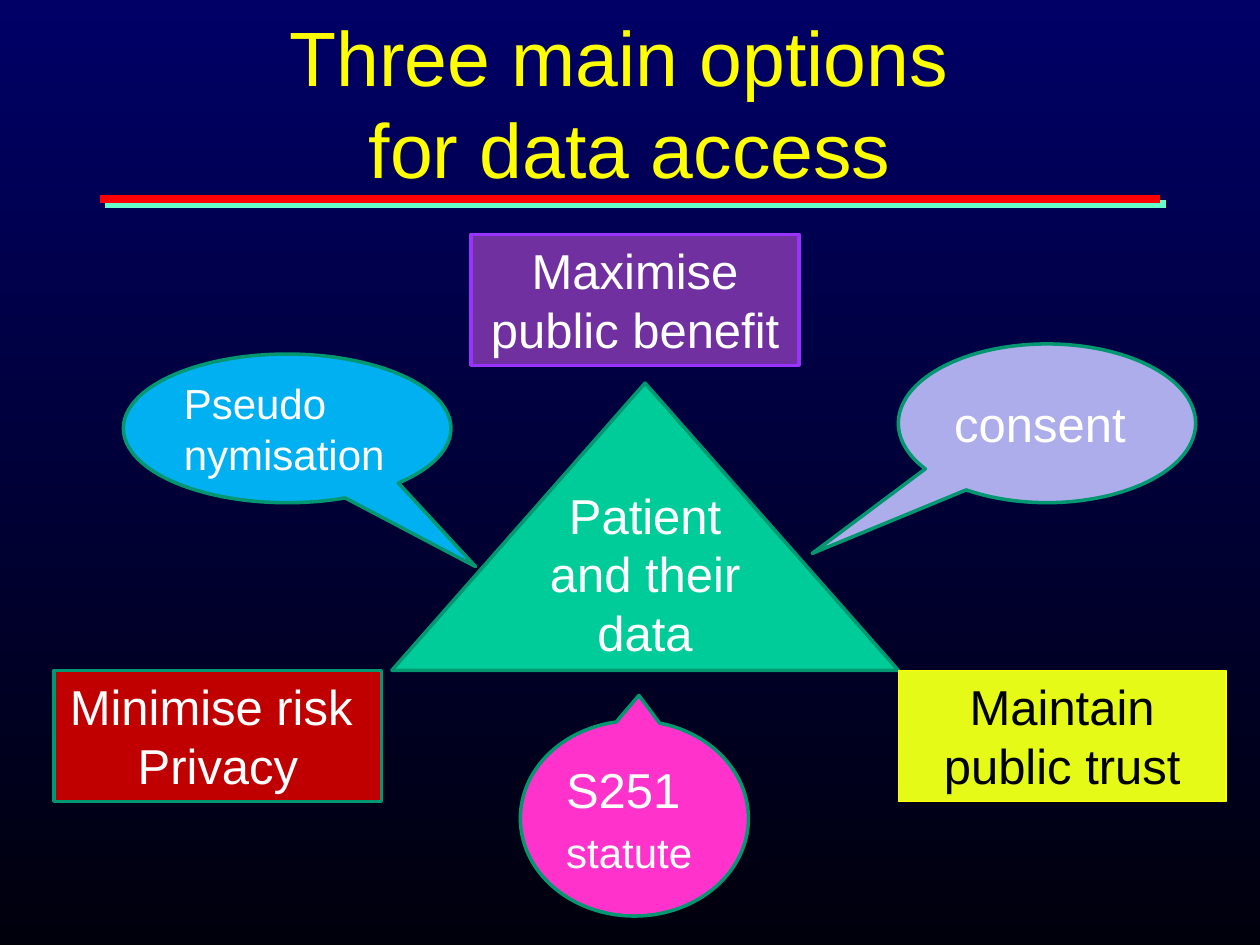
from lxml import etree
from pptx import Presentation
from pptx.dml.color import RGBColor
from pptx.enum.shapes import MSO_CONNECTOR, MSO_SHAPE
from pptx.enum.text import MSO_ANCHOR, PP_ALIGN
from pptx.oxml.ns import qn
from pptx.util import Inches, Pt

RECT, TRIANGLE = MSO_SHAPE.RECTANGLE, MSO_SHAPE.ISOSCELES_TRIANGLE
CALLOUT = MSO_SHAPE.OVAL_CALLOUT
CENTER, LEFT = PP_ALIGN.CENTER, PP_ALIGN.LEFT
TOP, MIDDLE = MSO_ANCHOR.TOP, MSO_ANCHOR.MIDDLE

FONT = "Arial"
WHITE, BLACK, YELLOW = "FFFFFF", "000000", "FFFF00"
GREEN = "009771"
GRADIENT = ("000066", "00000C")
MARGIN, RULE_Y, RULE_WIDTH = 0.79, 1.58, 8.42
RULE_COLOR, RULE_SHADOW = "FF0000", "66FFCC"

TITLE = "Three main options \vfor data access"
PATIENT = "Patient and their data"
PATIENT_BOX = (3.11, 3.04, 4.02, 2.28)

# left, top, lines, fill, line colour, line width, text colour
GOAL_SIZE = (2.6, 1.04)
GOALS = [
    (0.43, 5.32, ["Minimise risk ", "Privacy"], "C00000", GREEN, 2, WHITE),
    (3.74, 1.86, ["Maximise public benefit"], "7030A0", "9933FF", 2, WHITE),
    (7.13, 5.32, ["Maintain public trust"], "E5FB17", YELLOW, 0.75, BLACK),
]

# box, pointer tip, fill, (text, size) lines, space before as a share of size
OPTIONS = [
    ((7.13, 2.73, 2.36, 1.26), (-0.79, 0.82), "ADADEB", [("consent", 28)], 0),
    ((0.98, 2.81, 2.6, 1.18), (0.575, 0.93), "00B0F0",
     [("Pseudo", 24), ("nymisation", 24)], 0),
    ((4.13, 5.72, 1.81, 1.55), (0.02, -0.63), "FF33CC",
     [("S251", 28), ("statute", 24)], 0.2),
]


def rgb(color):
    return RGBColor.from_string(color)


def write(shape, lines, color=WHITE, align=CENTER, anchor=MIDDLE, before=0):
    tf = shape.text_frame
    tf.word_wrap = True
    tf.vertical_anchor = anchor
    for i, (text, size) in enumerate(lines):
        p = tf.paragraphs[0] if i == 0 else tf.add_paragraph()
        p.alignment = align
        p.space_before = Pt(size * before)
        for j, part in enumerate(text.split("\v")):
            if j:
                p.add_line_break()
            r = p.add_run()
            r.text = part
            r.font.name, r.font.size = FONT, Pt(size)
            r.font.color.rgb = rgb(color)


def add_shape(s, kind, box, fill, line=GREEN, width=2):
    sp = s.shapes.add_shape(kind, *map(Inches, box))
    sp.shadow.inherit = False
    sp.fill.solid()
    sp.fill.fore_color.rgb = rgb(fill)
    sp.line.color.rgb = rgb(line)
    sp.line.width = Pt(width)
    return sp


def add_title_rule(s):
    rule = s.shapes.add_connector(
        MSO_CONNECTOR.STRAIGHT, Inches(MARGIN), Inches(RULE_Y),
        Inches(MARGIN + RULE_WIDTH), Inches(RULE_Y))
    rule.line.color.rgb = rgb(RULE_COLOR)
    rule.line.width = Pt(4.5)
    effects = etree.SubElement(rule._element.spPr, qn("a:effectLst"))
    shadow = etree.SubElement(effects, qn("a:outerShdw"), dist=str(Pt(4.2)),
                              dir=str(45 * 60000), algn="ctr", rotWithShape="0")
    etree.SubElement(shadow, qn("a:srgbClr"), val=RULE_SHADOW)


def main():
    prs = Presentation()
    prs.slide_width, prs.slide_height = Inches(10), Inches(7.5)
    s = prs.slides.add_slide(prs.slide_layouts[6])

    fill = s.background.fill
    fill.gradient()
    fill.gradient_angle = 270
    for stop, color, position in zip(fill.gradient_stops, GRADIENT, (0, 1)):
        stop.color.rgb = rgb(color)
        stop.position = position

    add_title_rule(s)
    title = s.shapes.add_textbox(*map(Inches, (MARGIN, 0.18, RULE_WIDTH, 1.25)))
    write(title, [(TITLE, 44)], YELLOW)

    patient = add_shape(s, TRIANGLE, PATIENT_BOX, "00CC99")
    patient.text_frame.margin_bottom = Inches(0.45)
    write(patient, [(PATIENT, 28)])

    for left, top, lines, color, line, width, text_color in GOALS:
        goal = add_shape(s, RECT, (left, top, *GOAL_SIZE), color, line, width)
        write(goal, [(text, 28) for text in lines], text_color, anchor=TOP)

    for box, tip, color, lines, before in OPTIONS:
        option = add_shape(s, CALLOUT, box, color)
        option.adjustments[0], option.adjustments[1] = tip
        write(option, lines, align=LEFT, before=before)

    prs.save("out.pptx")


if __name__ == "__main__":
    main()
